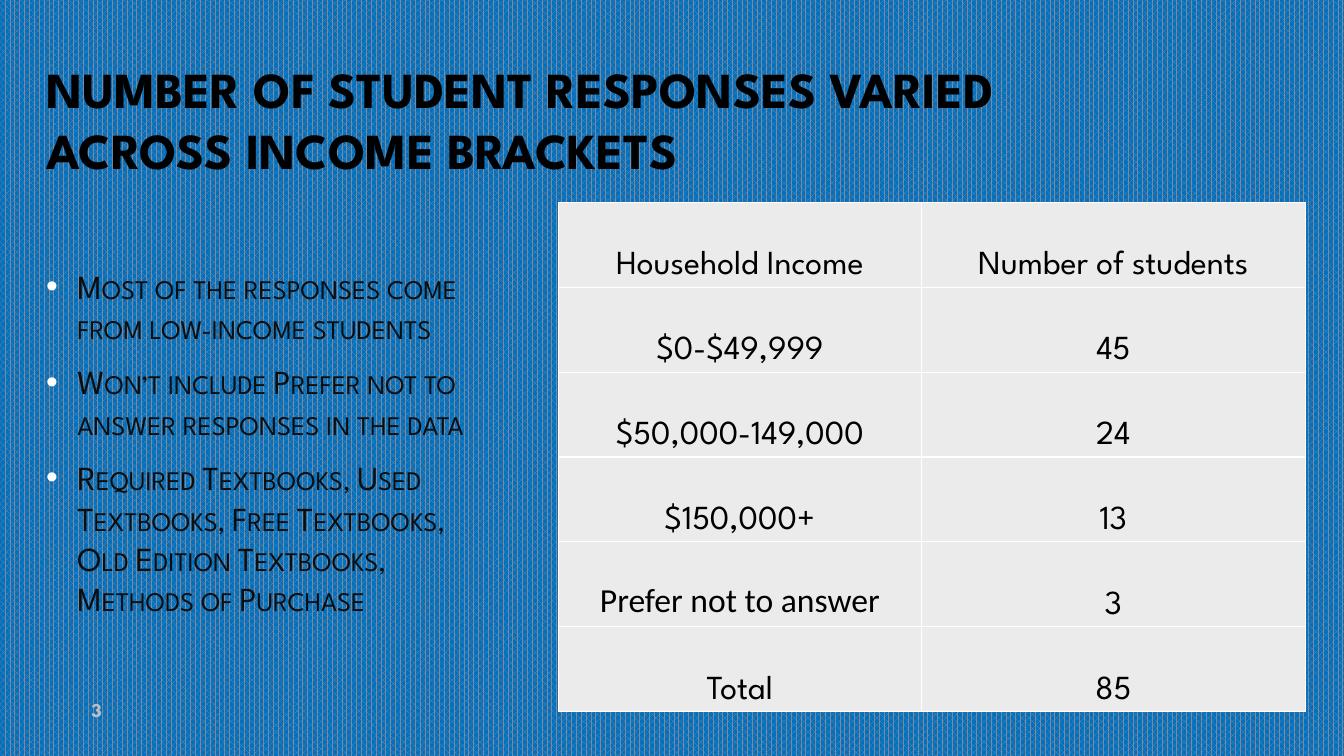
from dataclasses import dataclass
from typing import Any

import lxml.etree
import pptx
import pptx.dml.color
import pptx.enum.dml
import pptx.enum.text
import pptx.oxml.ns
import pptx.util

Align = pptx.enum.text.PP_ALIGN
Anchor = pptx.enum.text.MSO_ANCHOR
qn = pptx.oxml.ns.qn


# Colours, fonts and type sizes
@dataclass(frozen=True)
class Theme:
    font: str = "League Spartan"
    plain_font: str = "Calibri"
    background: str = "0070C0"
    pattern: str = "7C899A"
    heading: str = "000000"
    body: str = "0D0D0D"
    bullet: str = "FFFFFF"
    number: str = "BFBFBF"
    cell: str = "EBEBEB"
    border: str = "FFFFFF"
    border_width: float = 1
    heading_size: float = 36
    body_size: float = 24
    number_size: float = 14


THEME = Theme()
WIDTH = pptx.util.Inches(13.33)
HEIGHT = pptx.util.Inches(7.5)


@dataclass(frozen=True)
class Box:
    """Place on the slide, in percent of its width and height."""
    left: float
    top: float
    width: float
    height: float

    def lengths(self) -> tuple[int, int, int, int]:
        return (across(self.left), down(self.top), across(self.width), down(self.height))


@dataclass(frozen=True)
class TextStyle:
    size: float
    color: str
    font: str = THEME.font
    bold: bool = False
    align: Any = Align.LEFT


@dataclass(frozen=True)
class TextBlock:
    box: Box
    style: TextStyle
    lines: tuple[str, ...]
    bulleted: bool = False


@dataclass(frozen=True)
class IncomeRow:
    bracket: str
    students: str
    bracket_font: str = THEME.font


# Content
BLOCKS = (
    TextBlock(Box(2.7, 1.87, 81.25, 27.73),
              TextStyle(THEME.heading_size, THEME.heading, bold=True),
              ("NUMBER OF STUDENT RESPONSES VARIED ACROSS INCOME BRACKETS",)),
    TextBlock(Box(2.7, 25.6, 33.6, 65.73),
              TextStyle(THEME.body_size, THEME.body),
              ("Most of the responses come from low-income students",
               "Won’t include Prefer not to answer responses in the data",
               "Required Textbooks, Used Textbooks, Free Textbooks, "
               "Old Edition Textbooks, Methods of Purchase"),
              bulleted=True),
    TextBlock(Box(3.82, 91.2, 4.5, 5.33),
              TextStyle(THEME.number_size, THEME.number, bold=True, align=Align.RIGHT),
              ("3",)),
)
TABLE_BOX = Box(41.55, 26.8, 55.58, 67.33)
COLUMN_SHARES = (27, 28.58)
INCOME_ROWS = (
    IncomeRow("Household Income", "Number of students"),
    IncomeRow("$0-$49,999", "45"),
    IncomeRow("$50,000-149,000", "24"),
    IncomeRow("$150,000+", "13"),
    IncomeRow("Prefer not to answer", "3", THEME.plain_font),
    IncomeRow("Total", "85"),
)


def across(percent: float) -> int:
    return round(WIDTH * percent / 100)


def down(percent: float) -> int:
    return round(HEIGHT * percent / 100)


def rgb(color: str) -> pptx.dml.color.RGBColor:
    return pptx.dml.color.RGBColor.from_string(color)


def write(paragraph: Any, text: str, style: TextStyle) -> None:
    paragraph.text = text
    paragraph.alignment = style.align
    font = paragraph.font
    font.name, font.size, font.bold = style.font, pptx.util.Pt(style.size), style.bold
    font.color.rgb = rgb(style.color)


def add_bullet(paragraph: Any) -> None:
    """Small capitals behind a hanging bullet."""
    paragraph.space_before = pptx.util.Pt(THEME.body_size * 0.2)
    paragraph.space_after = pptx.util.Pt(6)
    properties = paragraph._p.get_or_add_pPr()
    indent = pptx.util.Inches(0.31)
    properties.set("marL", str(indent))
    properties.set("indent", str(-indent))
    defaults = properties.find(qn("a:defRPr"))
    defaults.set("cap", "small")
    color = lxml.etree.Element(qn("a:buClr"))
    lxml.etree.SubElement(color, qn("a:srgbClr"), val=THEME.bullet)
    defaults.addprevious(color)
    defaults.addprevious(lxml.etree.Element(qn("a:buFont"), typeface="Arial"))
    defaults.addprevious(lxml.etree.Element(qn("a:buChar"), char="•"))


def add_text(slide: Any, block: TextBlock) -> None:
    frame = slide.shapes.add_textbox(*block.box.lengths()).text_frame
    frame.word_wrap = True
    frame.vertical_anchor = Anchor.MIDDLE
    for index, line in enumerate(block.lines):
        paragraph = frame.add_paragraph() if index else frame.paragraphs[0]
        write(paragraph, line, block.style)
        if block.bulleted:
            add_bullet(paragraph)


def add_borders(cell: Any) -> None:
    properties = cell._tc.get_or_add_tcPr()
    for index, side in enumerate(("lnL", "lnR", "lnT", "lnB")):
        line = lxml.etree.Element(qn(f"a:{side}"), w=str(pptx.util.Pt(THEME.border_width)))
        fill = lxml.etree.SubElement(line, qn("a:solidFill"))
        lxml.etree.SubElement(fill, qn("a:srgbClr"), val=THEME.border)
        properties.insert(index, line)


def fill_cell(cell: Any, text: str, font: str) -> None:
    cell.fill.solid()
    cell.fill.fore_color.rgb = rgb(THEME.cell)
    cell.vertical_anchor = Anchor.BOTTOM
    cell.margin_left = cell.margin_right = cell.margin_top = pptx.util.Inches(0.01)
    cell.margin_bottom = pptx.util.Inches(0.05)
    write(cell.text_frame.paragraphs[0], text,
          TextStyle(THEME.body_size, THEME.heading, font, align=Align.CENTER))
    add_borders(cell)


def add_income_table(slide: Any) -> None:
    table = slide.shapes.add_table(len(INCOME_ROWS), len(COLUMN_SHARES),
                                   *TABLE_BOX.lengths()).table
    table.first_row = table.horz_banding = False
    for column, share in zip(table.columns, COLUMN_SHARES):
        column.width = across(share)
    for index, row in enumerate(INCOME_ROWS):
        table.rows[index].height = down(TABLE_BOX.height / len(INCOME_ROWS))
        fill_cell(table.cell(index, 0), row.bracket, row.bracket_font)
        fill_cell(table.cell(index, 1), row.students, THEME.font)


def main() -> None:
    presentation = pptx.Presentation()
    presentation.slide_width, presentation.slide_height = WIDTH, HEIGHT
    slide = presentation.slides.add_slide(presentation.slide_layouts[6])

    # Patterned background
    fill = slide.background.fill
    fill.patterned()
    fill.pattern = pptx.enum.dml.MSO_PATTERN.PERCENT_70
    fill.fore_color.rgb = rgb(THEME.pattern)
    fill.back_color.rgb = rgb(THEME.background)

    # Text and table
    for block in BLOCKS:
        add_text(slide, block)
    add_income_table(slide)
    presentation.save("out.pptx")


if __name__ == "__main__":
    main()
